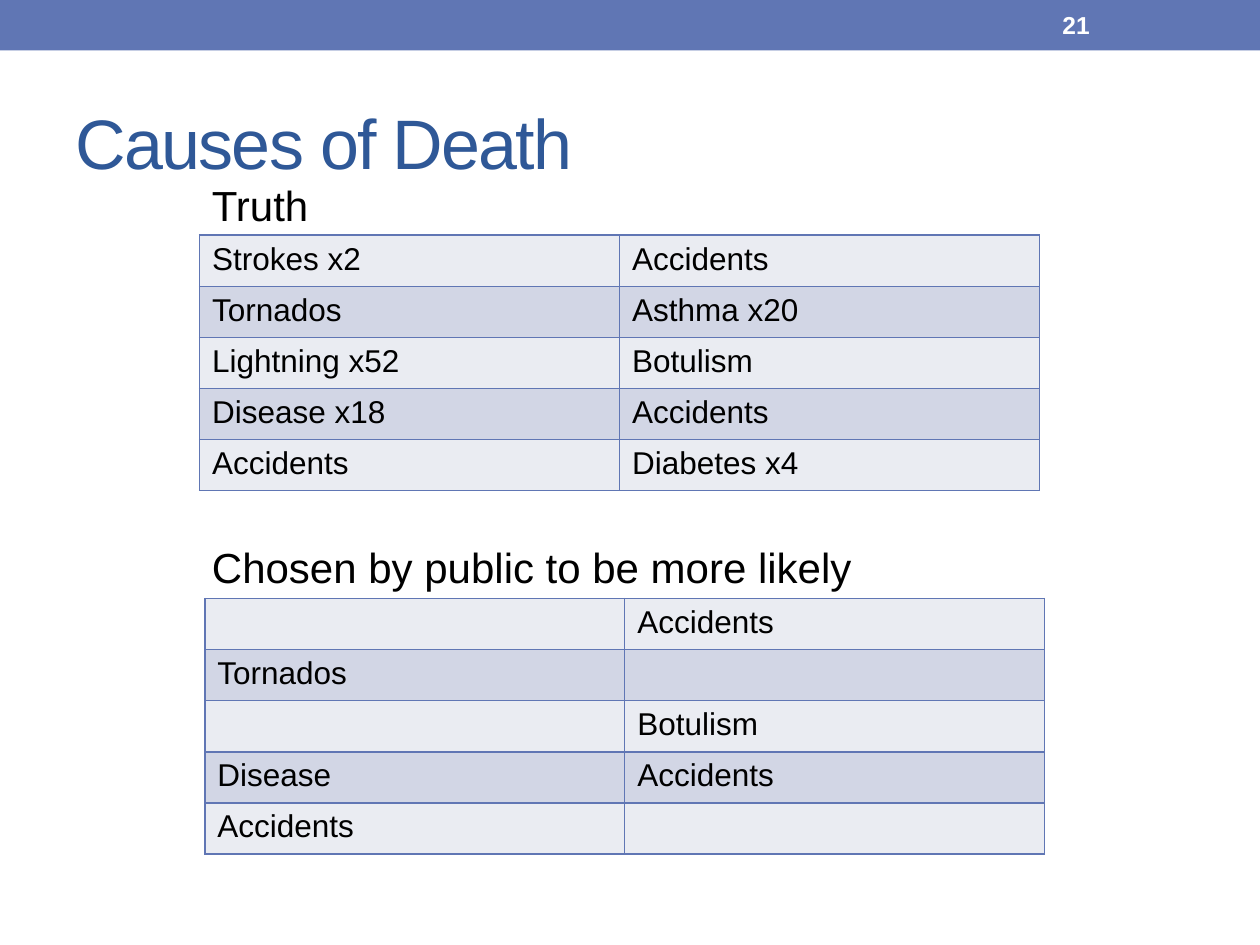
from lxml import etree
from pptx import Presentation
from pptx.dml.color import RGBColor
from pptx.enum.shapes import MSO_SHAPE
from pptx.enum.text import MSO_ANCHOR, MSO_AUTO_SIZE, PP_ALIGN
from pptx.oxml.ns import qn
from pptx.util import Inches, Pt

RECT = MSO_SHAPE.RECTANGLE
MIDDLE, TOP = MSO_ANCHOR.MIDDLE, MSO_ANCHOR.TOP
LEFT = PP_ALIGN.LEFT
NO_FIT, GROW = MSO_AUTO_SIZE.NONE, MSO_AUTO_SIZE.SHAPE_TO_FIT_TEXT
TITLE_ONLY = 5
COLS, ROWS = 120, 90  # grid over the whole slide
ROW = 4.87  # height of a table row in grid rows

COLORS = {
    "blue": "6076B4", "navy": "2F5897", "black": "000000",
    "white": "FFFFFF", "light": "EAECF2", "dark": "D2D6E5",
}

TRUTH = [
    ("Strokes x2", "Accidents"),
    ("Tornados", "Asthma x20"),
    ("Lightning x52", "Botulism"),
    ("Disease x18", "Accidents"),
    ("Accidents", "Diabetes x4"),
]
CHOSEN = [
    ("", "Accidents"),
    ("Tornados", ""),
    ("", "Botulism"),
    ("Disease", "Accidents"),
    ("Accidents", ""),
]


class Deck:
    def __init__(self, font):
        self.font = font
        self.prs = Presentation()
        self.prs.slide_width = Inches(10)
        self.prs.slide_height = Inches(7.5)
        self.slide = self.prs.slides.add_slide(
            self.prs.slide_layouts[TITLE_ONLY])

    def box(self, x, y, w, h):
        dx, dy = self.prs.slide_width / COLS, self.prs.slide_height / ROWS
        return int(x * dx), int(y * dy), int(w * dx), int(h * dy)

    def color(self, name):
        return RGBColor.from_string(COLORS[name])

    def put(self, frame, text, size, color="black", bold=False):
        frame.text = text
        par = frame.paragraphs[0]
        par.alignment = LEFT
        par.font.name, par.font.size, par.font.bold = self.font, Pt(size), bold
        par.font.color.rgb = self.color(color)
        return par

    def title(self, text, *place):
        shape = self.slide.shapes.title
        shape.left, shape.top, shape.width, shape.height = self.box(*place)
        frame = shape.text_frame
        frame.auto_size, frame.vertical_anchor = NO_FIT, MIDDLE
        par = self.put(frame, text, 40, "navy")
        par.runs[0]._r.get_or_add_rPr().set("spc", "-100")

    def band(self, *place):
        shape = self.slide.shapes.add_shape(RECT, *self.box(*place))
        shape.shadow.inherit = False
        shape.fill.solid()
        shape.fill.fore_color.rgb = self.color("blue")
        shape.line.fill.background()

    def label(self, text, *place, size=24, color="black", bold=False,
              anchor=TOP, fit=GROW):
        frame = self.slide.shapes.add_textbox(*self.box(*place)).text_frame
        frame.word_wrap = False
        frame.auto_size, frame.vertical_anchor = fit, anchor
        self.put(frame, text, size, color, bold)

    def edge(self, cell):
        props = cell._tc.get_or_add_tcPr()
        for side in ("lnL", "lnR", "lnT", "lnB"):
            line = etree.SubElement(props, qn("a:" + side), w=str(Pt(1)))
            fill = etree.SubElement(line, qn("a:solidFill"))
            etree.SubElement(fill, qn("a:srgbClr"), val=COLORS["blue"])

    def table(self, data, x, y, w):
        place = self.box(x, y, w, ROW * len(data))
        table = self.slide.shapes.add_table(
            len(data), len(data[0]), *place).table
        table.first_row = False
        for r, texts in enumerate(data):
            for c, text in enumerate(texts):
                cell = table.cell(r, c)
                self.edge(cell)
                cell.fill.solid()
                cell.fill.fore_color.rgb = self.color(("light", "dark")[r % 2])
                self.put(cell.text_frame, text, 18)


def main():
    deck = Deck("Arial")

    # Top band with page number, then title
    deck.band(0, 0, COLS, 4.8)
    deck.label("21", 100, 0.25, 14, 4.3, size=14, color="white", bold=True,
               anchor=MIDDLE, fit=NO_FIT)
    deck.title("Causes of Death", 6, 7, 108, 13)

    # Actual causes
    deck.label("Truth", 19, 16.5, 11.6, 6)
    deck.table(TRUTH, 19, 22.4, 80)

    # Causes the public picked
    deck.label("Chosen by public to be more likely", 19, 51, 64, 6)
    deck.table(CHOSEN, 19.5, 57, 80)

    deck.prs.save("out.pptx")


if __name__ == "__main__":
    main()
